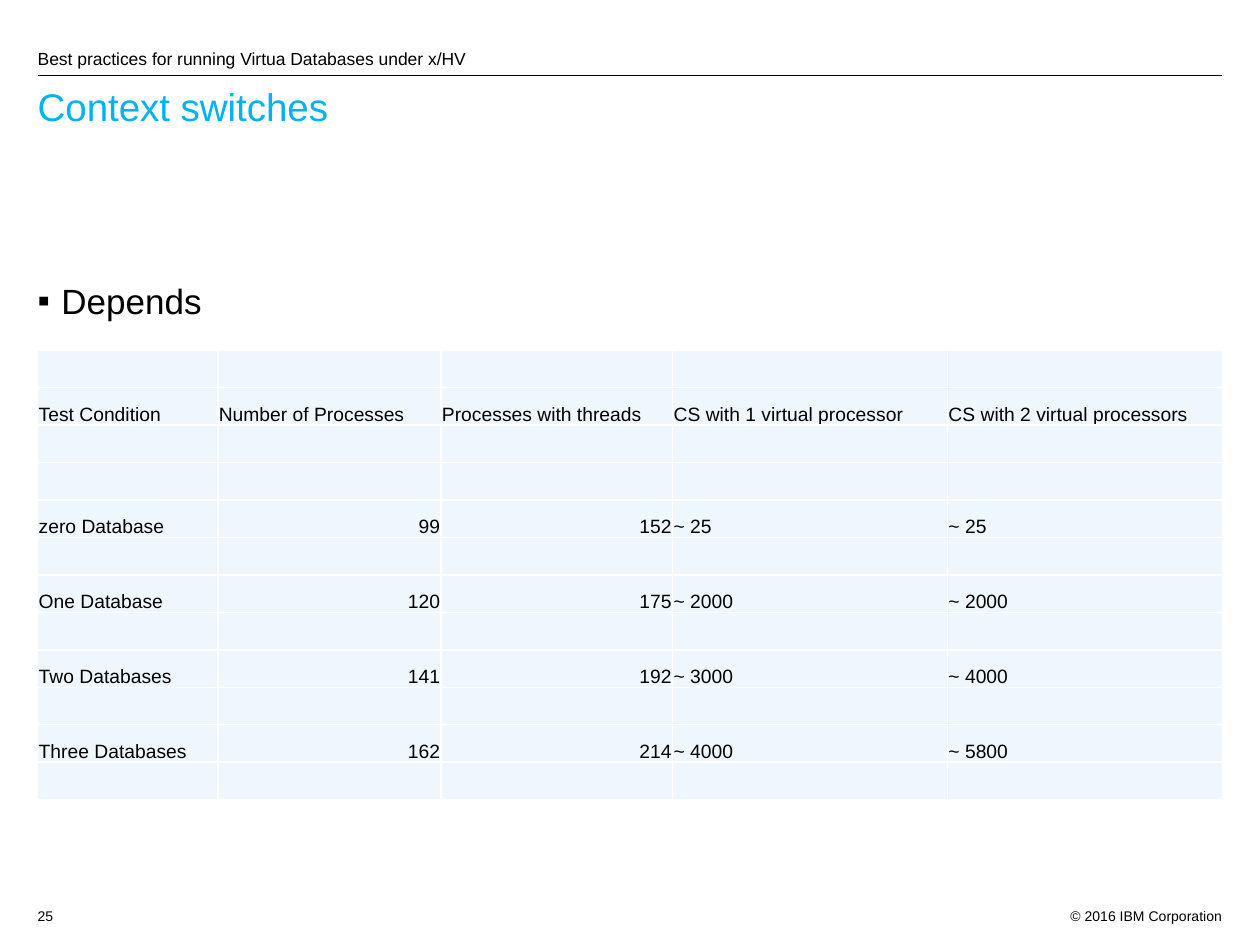
from lxml import etree
from pptx import Presentation
from pptx.dml.color import RGBColor
from pptx.enum.shapes import MSO_CONNECTOR
from pptx.enum.text import MSO_ANCHOR as Anchor, PP_ALIGN as Align
from pptx.oxml import parse_xml
from pptx.oxml.ns import nsdecls, qn
from pptx.util import Cm, Pt

COLORS = {"text": "000000", "title": "00B2EF", "cell": "EDF7FD", "border": "FFFFFF"}
FONT = "Arial"
CELL_SIZE = 11
MARGIN = 0.25

HEADINGS = ("Test Condition", "Number of Processes", "Processes with threads",
            "CS with 1 virtual processor", "CS with 2 virtual processors")
# Row number in the table -> cell texts; all other rows are empty
TABLE_ROWS = {
    1: HEADINGS,
    4: ("zero Database", "99", "152", "~ 25", "~ 25"),
    6: ("One Database", "120", "175", "~ 2000", "~ 2000"),
    8: ("Two Databases", "141", "192", "~ 3000", "~ 4000"),
    10: ("Three Databases", "162", "214", "~ 4000", "~ 5800"),
}
ROW_COUNT = 12
COLUMN_WIDTHS = (3.63, 4.5, 4.67, 5.54, 5.54)


def rgb(name):
    return RGBColor.from_string(COLORS[name])


def add_run(paragraph, text, size, color="text"):
    run = paragraph.add_run()
    run.text = text
    run.font.name = FONT
    run.font.size = Pt(size)
    run.font.color.rgb = rgb(color)


def set_margins(target, left, top, right, bottom):
    target.margin_left, target.margin_top = Cm(left), Cm(top)
    target.margin_right, target.margin_bottom = Cm(right), Cm(bottom)


def add_text(slide, box, text, size, align=Align.LEFT, anchor=Anchor.TOP, inset=0.13):
    """Add a one-paragraph text box and return its paragraph."""
    frame = slide.shapes.add_textbox(*map(Cm, box)).text_frame
    frame.word_wrap = True
    frame.vertical_anchor = anchor
    set_margins(frame, MARGIN, inset, MARGIN, inset)
    paragraph = frame.paragraphs[0]
    paragraph.alignment = align
    add_run(paragraph, text, size)
    return paragraph


def add_header(slide, left, top, width, height):
    add_text(slide, (left, top, 21.59, height - 0.13),
             "Best practices for running Virtua Databases under x/HV", 10,
             anchor=Anchor.BOTTOM, inset=0)
    line_top = Cm(top + height)
    rule = slide.shapes.add_connector(
        MSO_CONNECTOR.STRAIGHT, Cm(left + MARGIN), line_top,
        Cm(left + width - MARGIN), line_top)
    rule.line.color.rgb = rgb("text")
    rule.line.width = Pt(0.75)
    etree.SubElement(rule._element.spPr, qn("a:effectLst"))


def set_title(slide, left, top, width, height):
    title = slide.shapes.title
    title.left, title.top, title.width, title.height = map(Cm, (left, top, width, height))
    frame = title.text_frame
    frame.vertical_anchor = Anchor.TOP
    set_margins(frame, MARGIN, 0.13, MARGIN, 0.13)
    paragraph = frame.paragraphs[0]
    paragraph.alignment = Align.LEFT
    paragraph.line_spacing = 0.9
    add_run(paragraph, "Context switches", 22, "title")


def add_body(slide, left, top, width, height):
    paragraph = add_text(slide, (left, top, width, height), "Depends", 20, inset=0.23)
    properties = paragraph._p.get_or_add_pPr()
    properties.set("marL", str(Cm(0.48)))
    properties.set("indent", str(-Cm(0.48)))
    color = etree.SubElement(properties, qn("a:buClr"))
    etree.SubElement(color, qn("a:srgbClr"), val=COLORS["text"])
    etree.SubElement(properties, qn("a:buFont"), typeface=FONT)
    etree.SubElement(properties, qn("a:buChar"), char="▪")


def format_cell(cell):
    properties = cell._tc.get_or_add_tcPr()
    for side in ("lnL", "lnR", "lnT", "lnB"):
        properties.append(parse_xml(
            f'<a:{side} {nsdecls("a")} w="{Pt(1)}"><a:solidFill>'
            f'<a:srgbClr val="{COLORS["border"]}"/></a:solidFill></a:{side}>'))
    cell.fill.solid()
    cell.fill.fore_color.rgb = rgb("cell")
    cell.vertical_anchor = Anchor.BOTTOM
    set_margins(cell, 0.02, 0.02, 0.02, 0)


def add_results_table(slide, left, top, width, height):
    table = slide.shapes.add_table(ROW_COUNT, len(COLUMN_WIDTHS),
                                   *map(Cm, (left, top, width, height))).table
    table.first_row = table.horz_banding = False
    for column, column_width in zip(table.columns, COLUMN_WIDTHS):
        column.width = Cm(column_width)
    for number, row in enumerate(table.rows):
        row.height = Cm(height / ROW_COUNT)
        texts = TABLE_ROWS.get(number, ("",) * len(COLUMN_WIDTHS))
        for cell, text in zip(row.cells, texts):
            format_cell(cell)
            paragraph = cell.text_frame.paragraphs[0]
            paragraph.alignment = Align.RIGHT if text.isdigit() else Align.LEFT
            if text:
                add_run(paragraph, text, CELL_SIZE)
            else:
                # Keeps empty rows from growing to the default text size
                etree.SubElement(paragraph._p, qn("a:endParaRPr"), sz=str(CELL_SIZE * 100))


def add_footer(slide, left, top, width, height):
    add_text(slide, (left, top, 1.02, height), "25", 8)
    add_text(slide, (left + width - 3.81, top, 3.81, height),
             "© 2016 IBM Corporation", 8, Align.RIGHT)


def main():
    presentation = Presentation()
    presentation.slide_width, presentation.slide_height = Cm(25.4), Cm(19.05)
    slide = presentation.slides.add_slide(presentation.slide_layouts[5])
    add_header(slide, 0.51, 0.38, 24.38, 1.14)
    set_title(slide, 0.51, 1.65, 24.13, 2.03)
    add_body(slide, 0.51, 5.41, 24.33, 9.37)
    add_footer(slide, 0.51, 18.16, 24.38, 0.51)
    add_results_table(slide, 0.76, 7.06, sum(COLUMN_WIDTHS), 9.07)
    presentation.save("out.pptx")


if __name__ == "__main__":
    main()
